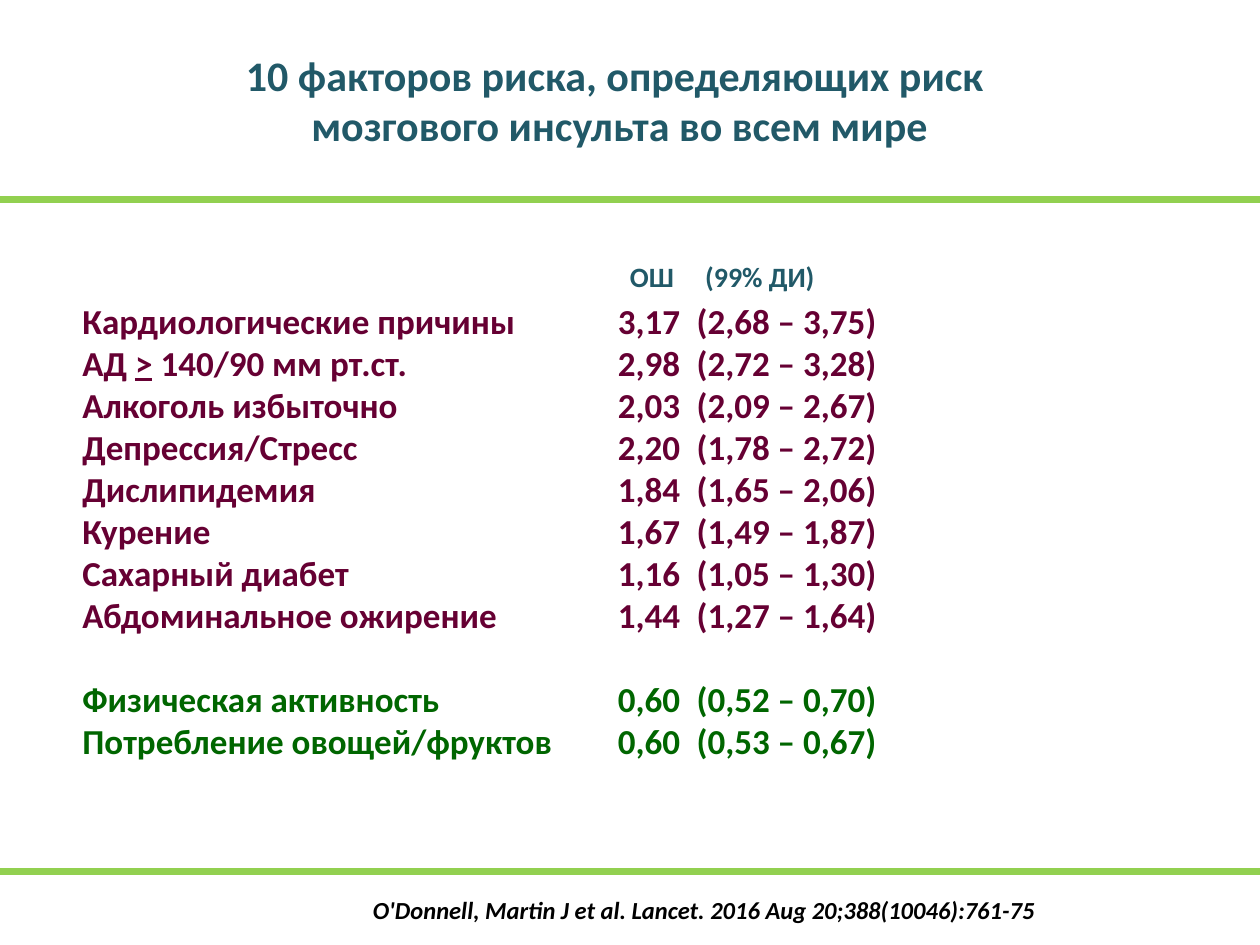
from lxml import etree
from pptx import Presentation
from pptx.dml.color import RGBColor
from pptx.enum.shapes import MSO_CONNECTOR
from pptx.enum.text import MSO_ANCHOR, MSO_AUTO_SIZE, PP_ALIGN
from pptx.oxml.ns import qn
from pptx.util import Pt

STRAIGHT = MSO_CONNECTOR.STRAIGHT
MIDDLE = MSO_ANCHOR.MIDDLE
NO_FIT, GROW = MSO_AUTO_SIZE.NONE, MSO_AUTO_SIZE.SHAPE_TO_FIT_TEXT
CENTER = PP_ALIGN.CENTER

SLIDE_WIDTH, SLIDE_HEIGHT = 720, 540
TEAL, MAROON, GREEN, LIME, BLACK = "215968", "660033", "006600", "92D050", "000000"
ROW_HEIGHT = 24

TITLE_LINES = ["10 факторов риска, определяющих риск ", "мозгового инсульта во всем мире"]
HARMFUL_FACTORS = [
    ("Кардиологические причины", "3,17", "(2,68 – 3,75)"),
    ("АД > 140/90 мм рт.ст.", "2,98", "(2,72 – 3,28)"),
    ("Алкоголь избыточно", "2,03", "(2,09 – 2,67)"),
    ("Депрессия/Стресс", "2,20", "(1,78 – 2,72)"),
    ("Дислипидемия", "1,84", "(1,65 – 2,06)"),
    ("Курение", "1,67", "(1,49 – 1,87)"),
    ("Сахарный диабет", "1,16", "(1,05 – 1,30)"),
    ("Абдоминальное ожирение", "1,44", "(1,27 – 1,64)"),
]
PROTECTIVE_FACTORS = [
    ("Физическая активность", "0,60", "(0,52 – 0,70)"),
    ("Потребление овощей/фруктов", "0,60", "(0,53 – 0,67)"),
]
CITATION = "O'Donnell, Martin J et al. Lancet. 2016 Aug 20;388(10046):761-75"


def color(hex_value):
    return RGBColor.from_string(hex_value)


def add_run(paragraph, text, size, hex_value, **extra):
    run = paragraph.add_run()
    run.text = text
    values = {"name": "Calibri", "size": Pt(size), "bold": True, **extra}
    for name, value in values.items():
        setattr(run.font, name, value)
    run.font.color.rgb = color(hex_value)


def set_tabs(paragraph, *positions):
    tab_list = etree.SubElement(paragraph._p.get_or_add_pPr(), qn("a:tabLst"))
    for position in positions:
        etree.SubElement(tab_list, qn("a:tab"), pos=str(Pt(position)), algn="l")


def add_text_frame(slide, box, **extra):
    frame = slide.shapes.add_textbox(*map(Pt, box)).text_frame
    values = {"word_wrap": True, "auto_size": NO_FIT, "vertical_anchor": MIDDLE, **extra}
    for name, value in values.items():
        setattr(frame, name, value)
    return frame


def next_paragraph(frame, index):
    return frame.add_paragraph() if index else frame.paragraphs[0]


def add_rule(slide, y):
    rule = slide.shapes.add_connector(STRAIGHT, 0, Pt(y), Pt(SLIDE_WIDTH), Pt(y))
    rule.line.color.rgb = color(LIME)
    rule.line.width = Pt(4)
    etree.SubElement(rule._element.spPr, qn("a:effectLst"))


def fill_title(slide, box):
    title = slide.shapes.title
    for name, value in zip(("left", "top", "width", "height"), box):
        setattr(title, name, Pt(value))
    frame = title.text_frame
    frame.auto_size, frame.vertical_anchor = NO_FIT, MIDDLE
    for index, line in enumerate(TITLE_LINES):
        paragraph = next_paragraph(frame, index)
        paragraph.alignment = CENTER
        add_run(paragraph, line, 24, TEAL)


def add_column_heads(slide, box):
    frame = add_text_frame(slide, box, margin_left=Pt(34))
    paragraph = frame.paragraphs[0]
    set_tabs(paragraph, 43)
    add_run(paragraph, "ОШ\t(99% ДИ)", 16, TEAL)


def add_factors(slide, box):
    frame = add_text_frame(slide, box)
    rows = [(row, MAROON) for row in HARMFUL_FACTORS]
    rows += [(row, GREEN) for row in PROTECTIVE_FACTORS]
    for index, (row, hex_value) in enumerate(rows):
        paragraph = next_paragraph(frame, index)
        set_tabs(paragraph, 306, 351)
        # The gap between the two groups is one row high
        if index == len(HARMFUL_FACTORS):
            paragraph.space_before = Pt(ROW_HEIGHT)
        # An underlined ">" stands for "greater or equal"
        before, sign, after = "\t".join(row).partition(">")
        add_run(paragraph, before, 20, hex_value)
        if sign:
            add_run(paragraph, sign, 20, hex_value, underline=True)
            add_run(paragraph, after, 20, hex_value)


def add_citation(slide, box):
    frame = add_text_frame(slide, box, auto_size=GROW, vertical_anchor=MSO_ANCHOR.TOP)
    add_run(frame.paragraphs[0], CITATION, 14, BLACK, italic=True)


def main():
    presentation = Presentation()
    presentation.slide_width = Pt(SLIDE_WIDTH)
    presentation.slide_height = Pt(SLIDE_HEIGHT)
    slide = presentation.slides.add_slide(presentation.slide_layouts[5])
    slide.background.fill.solid()
    slide.background.fill.fore_color.rgb = color("FFFFFF")

    # Heading
    fill_title(slide, (18, 18, 672, 78))
    add_rule(slide, 114)

    # Risk factors with odds ratios and intervals
    add_column_heads(slide, (326, 146, 174, 24))
    add_factors(slide, (40, 168, 636, 270))

    # Source
    add_rule(slide, 498)
    add_citation(slide, (206, 508, 413, 24))

    presentation.save("out.pptx")


if __name__ == "__main__":
    main()
